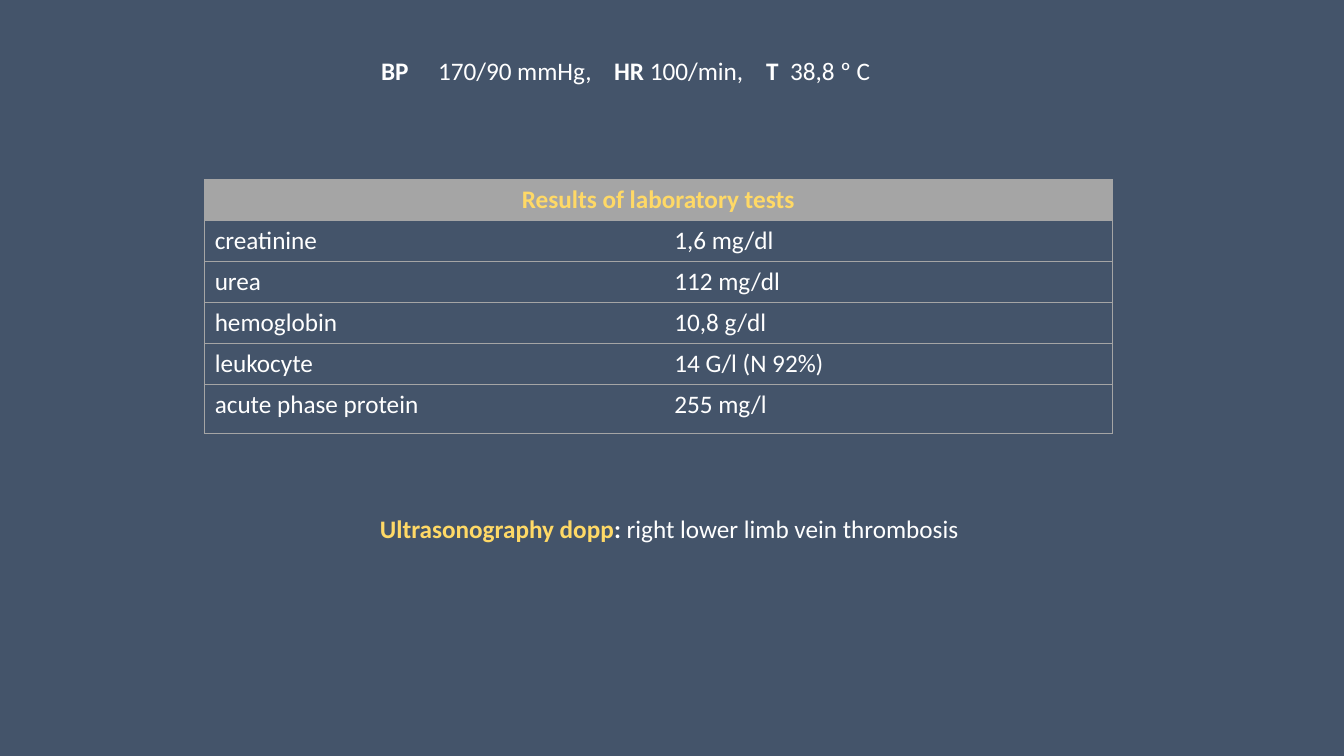
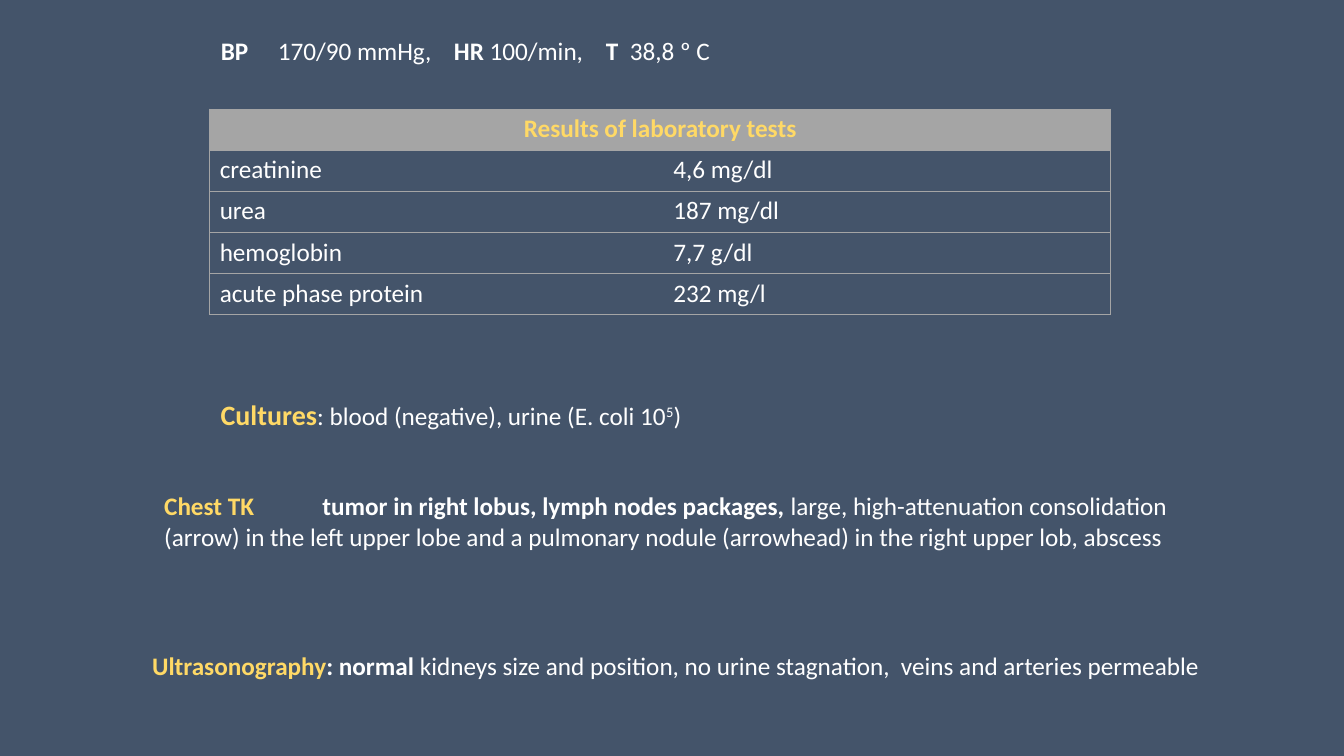
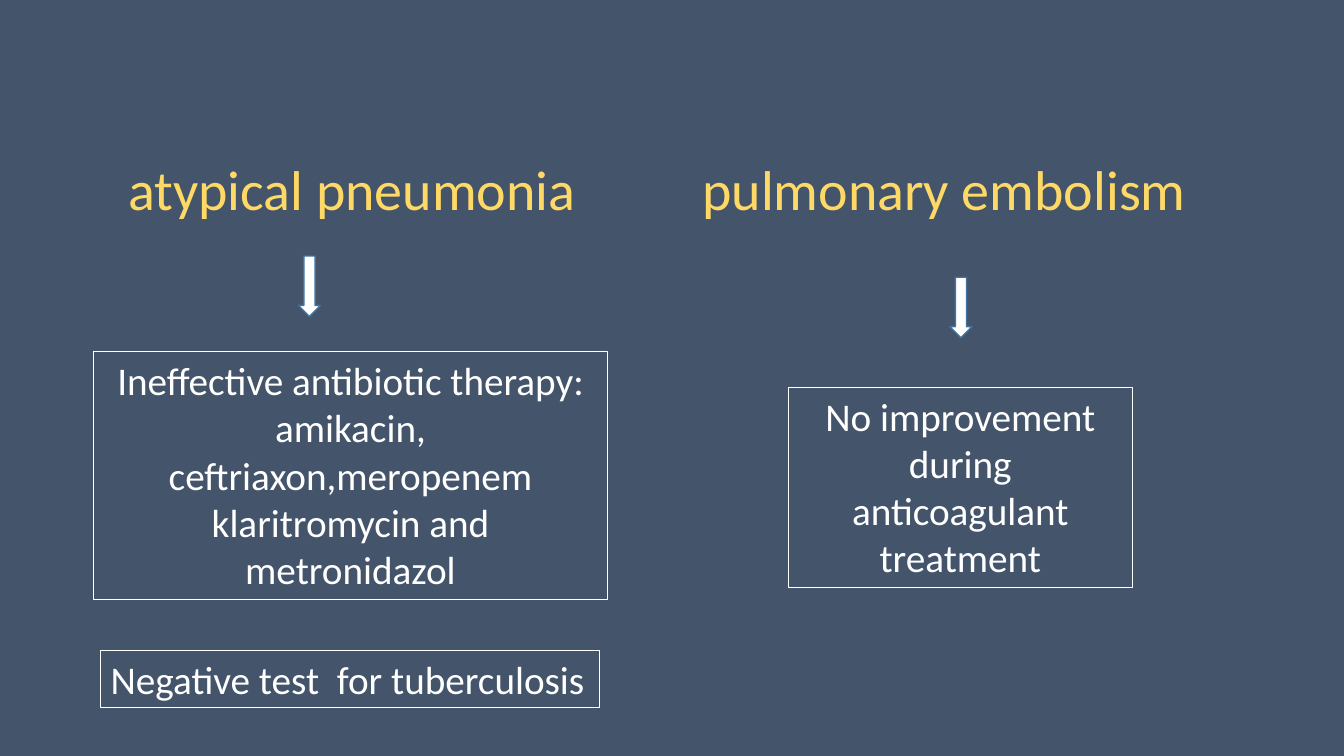
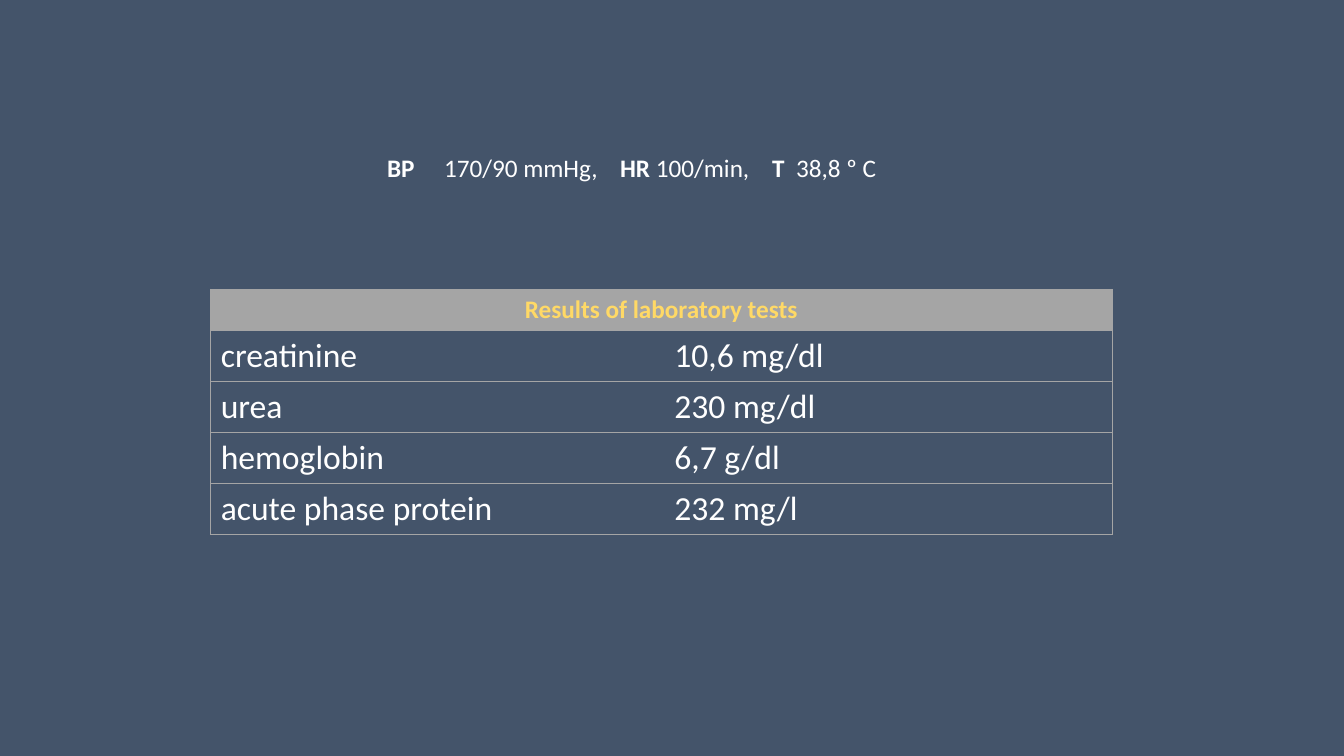
"""Build four slides on lab results and failed treatment."""
from dataclasses import dataclass

from lxml import etree
from pptx import Presentation
from pptx.dml.color import RGBColor
from pptx.enum.shapes import MSO_SHAPE
from pptx.enum.text import MSO_ANCHOR, MSO_AUTO_SIZE, PP_ALIGN
from pptx.oxml.ns import qn
from pptx.util import Inches, Pt

LEFT, MID = PP_ALIGN.LEFT, PP_ALIGN.CENTER
TOP, FIXED = MSO_ANCHOR.TOP, MSO_AUTO_SIZE.NONE
DOWN = MSO_SHAPE.DOWN_ARROW


@dataclass(frozen=True)
class Theme:
    font: str = "Calibri"
    back: str = "44546A"
    white: str = "FFFFFF"
    gold: str = "FFD966"
    grey: str = "A5A5A5"
    blue: str = "43739E"
    text: int = 18
    lead: int = 20
    cell: int = 24
    box: int = 28
    head: int = 40
    rule: float = 0.5
    edge: float = 0.75


T = Theme()
STYLES = {
    "plain": (T.text, T.white, False),
    "bold": (T.text, T.white, True),
    "key": (T.text, T.gold, True),
    "lead": (T.lead, T.gold, True),
    "cell": (T.cell, T.white, False),
    "box": (T.box, T.white, False),
    "head": (T.head, T.gold, False),
    "super": (T.text, T.white, False),
}

prs = Presentation()
prs.slide_width, prs.slide_height = Inches(13.33), Inches(7.5)
WIDE, HIGH = prs.slide_width / 100, prs.slide_height / 100
fill = prs.slide_master.background.fill
fill.solid()
fill.fore_color.rgb = RGBColor.from_string(T.back)


def place(x, y, w, h):
    """Turn shares of the slide, in percent, into lengths."""
    return int(x * WIDE), int(y * HIGH), int(w * WIDE), int(h * HIGH)


def write(frame, runs, align=LEFT, tabs=()):
    """Fill a text frame with styled runs and tab stops."""
    form = {"word_wrap": True, "vertical_anchor": TOP, "auto_size": FIXED}
    for name, value in form.items():
        setattr(frame, name, value)
    para = frame.paragraphs[0]
    para.alignment = align
    if tabs:
        stops = etree.SubElement(para._p.get_or_add_pPr(), qn("a:tabLst"))
        for stop in tabs:
            etree.SubElement(stops, qn("a:tab"), pos=str(int(stop * WIDE)), algn="l")
    for text, style in runs:
        run = para.add_run()
        run.text = text
        size, color, bold = STYLES[style]
        for name, value in {"name": T.font, "size": Pt(size), "bold": bold}.items():
            setattr(run.font, name, value)
        run.font.color.rgb = RGBColor.from_string(color)
        if style == "super":
            run._r.get_or_add_rPr().set("baseline", "30000")


VITALS = [("BP\t", "bold"), ("170/90 mmHg,\t", "plain"), ("HR", "bold"),
          (" 100/min,\t", "plain"), ("T\t", "bold"), ("38,8 º C", "plain")]
STOPS = (4.24, 17.34, 28.65, 30.43)
TESTS = "Results of laboratory tests"

SLIDES = [
    {
        "title": ((27.6, 6.67, 38.4, 5.33), VITALS, STOPS),
        "table": (15.23, 23.75, (34.2, 33.3), (5.43,) * 5 + (6.47,), "plain", [
            ("creatinine", "1,6 mg/dl"), ("urea", "112 mg/dl"),
            ("hemoglobin", "10,8 g/dl"), ("leukocyte", "14 G/l (N 92%)"),
            ("acute phase protein", "255 mg/l")]),
        "notes": [
            ((25.8, 67.2, 48, 9.47), MID, (), False,
             [("Ultrasonography dopp", "key"), (": ", "bold"),
              ("right lower limb vein thrombosis", "plain")])],
    },
    {
        "title": ((15.68, 4, 38.4, 5.33), VITALS, STOPS),
        "table": (15.6, 14.4, (33.75, 33.3), (5.43,) * 5, "plain", [
            ("creatinine", "4,6 mg/dl"), ("urea", "187 mg/dl"),
            ("hemoglobin", "7,7 g/dl"), ("acute phase protein", "232 mg/l")]),
        "notes": [
            ((15.68, 51.87, 38, 5.87), LEFT, (), False,
             [("Cultures", "lead"),
              (": blood (negative), urine (E. coli 10", "plain"),
              ("5", "super"), (")", "plain")]),
            ((11.48, 64.27, 79, 9.47), LEFT, (11.78,), False,
             [("Chest TK\t", "key"),
              ("tumor in right lobus, lymph nodes packages, ", "bold"),
              ("large, high-attenuation consolidation (arrow) in the left upper "
               "lobe and a pulmonary nodule (arrowhead) in the right upper lob, "
               "abscess", "plain")]),
            ((10.58, 85.33, 80.5, 5.33), LEFT, (), False,
             [("Ultrasonography", "key"), (": normal ", "bold"),
              ("kidneys size and position, no urine stagnation,  veins and "
               "arteries permeable", "plain")])],
    },
    {
        "title": ((8.78, 19.73, 82, 10.4),
                  [("atypical pneumonia\tpulmonary embolism", "head")], (42.72,)),
        "notes": [
            ((6.98, 46.53, 38.2, 32.8), MID, (), True,
             [("Ineffective antibiotic therapy: amikacin, ceftriaxon,meropenem "
               "klaritromycin and metronidazol", "box")]),
            ((7.5, 86, 37.13, 7.6), LEFT, (), True,
             [("Negative test  for tuberculosis", "box")]),
            ((58.66, 51.2, 25.58, 26.53), MID, (), True,
             [("No improvement during anticoagulant treatment", "box")])],
        "arrows": [(22.2, 33.87), (70.67, 36.67)],
    },
    {
        "title": ((28.05, 19.47, 38.4, 5.33), VITALS, STOPS),
        "table": (15.68, 38.27, (33.75, 33.3), (5.43,) + (6.68,) * 4, "cell", [
            ("creatinine", "10,6 mg/dl"), ("urea", "230 mg/dl"),
            ("hemoglobin", "6,7 g/dl"), ("acute phase protein", "232 mg/l")]),
    },
]

for page in SLIDES:
    slide = prs.slides.add_slide(prs.slide_layouts.get_by_name("Title Only"))
    spot, runs, tabs = page["title"]
    title = slide.shapes.title
    for name, value in zip(("left", "top", "width", "height"), place(*spot)):
        setattr(title, name, value)
    write(title.text_frame, runs, tabs=tabs)

    if "table" in page:
        x, y, cols, rows, style, data = page["table"]
        spot = place(x, y, sum(cols), sum(rows))
        grid = slide.shapes.add_table(len(rows), len(cols), *spot).table
        grid.horz_banding = False
        for col, share in zip(grid.columns, cols):
            col.width = int(share * WIDE)
        for row, share in zip(grid.rows, rows):
            row.height = int(share * HIGH)
        grid.cell(0, 0).merge(grid.cell(0, 1))
        write(grid.cell(0, 0).text_frame, [(TESTS, "key")], MID)
        for r in range(len(rows)):
            for c in range(len(cols)):
                cell = grid.cell(r, c)
                if r:
                    write(cell.text_frame, [(data[r - 1][c], style)])
                props = cell._tc.get_or_add_tcPr()
                for side in "LRTB":
                    line = etree.SubElement(props, qn("a:ln" + side), w=str(Pt(T.rule)))
                    if side in ("LTB", "RTB")[c] or cell.is_merge_origin:
                        ink = etree.SubElement(line, qn("a:solidFill"))
                        etree.SubElement(ink, qn("a:srgbClr"), val=T.grey)
                    else:
                        etree.SubElement(line, qn("a:noFill"))
                if r:
                    cell.fill.background()
                else:
                    cell.fill.solid()
                    cell.fill.fore_color.rgb = RGBColor.from_string(T.grey)

    for spot, align, tabs, framed, runs in page.get("notes", ()):
        note = slide.shapes.add_textbox(*place(*spot))
        write(note.text_frame, runs, align, tabs)
        if framed:
            note.line.color.rgb = RGBColor.from_string(T.white)
            note.line.width = Pt(T.edge)

    for x, y in page.get("arrows", ()):
        arrow = slide.shapes.add_shape(DOWN, *place(x, y, 1.65, 8))
        arrow.shadow.inherit = False
        arrow.fill.solid()
        arrow.fill.fore_color.rgb = RGBColor.from_string(T.white)
        arrow.line.color.rgb = RGBColor.from_string(T.blue)
        arrow.line.width = Pt(1)

prs.save("out.pptx")
